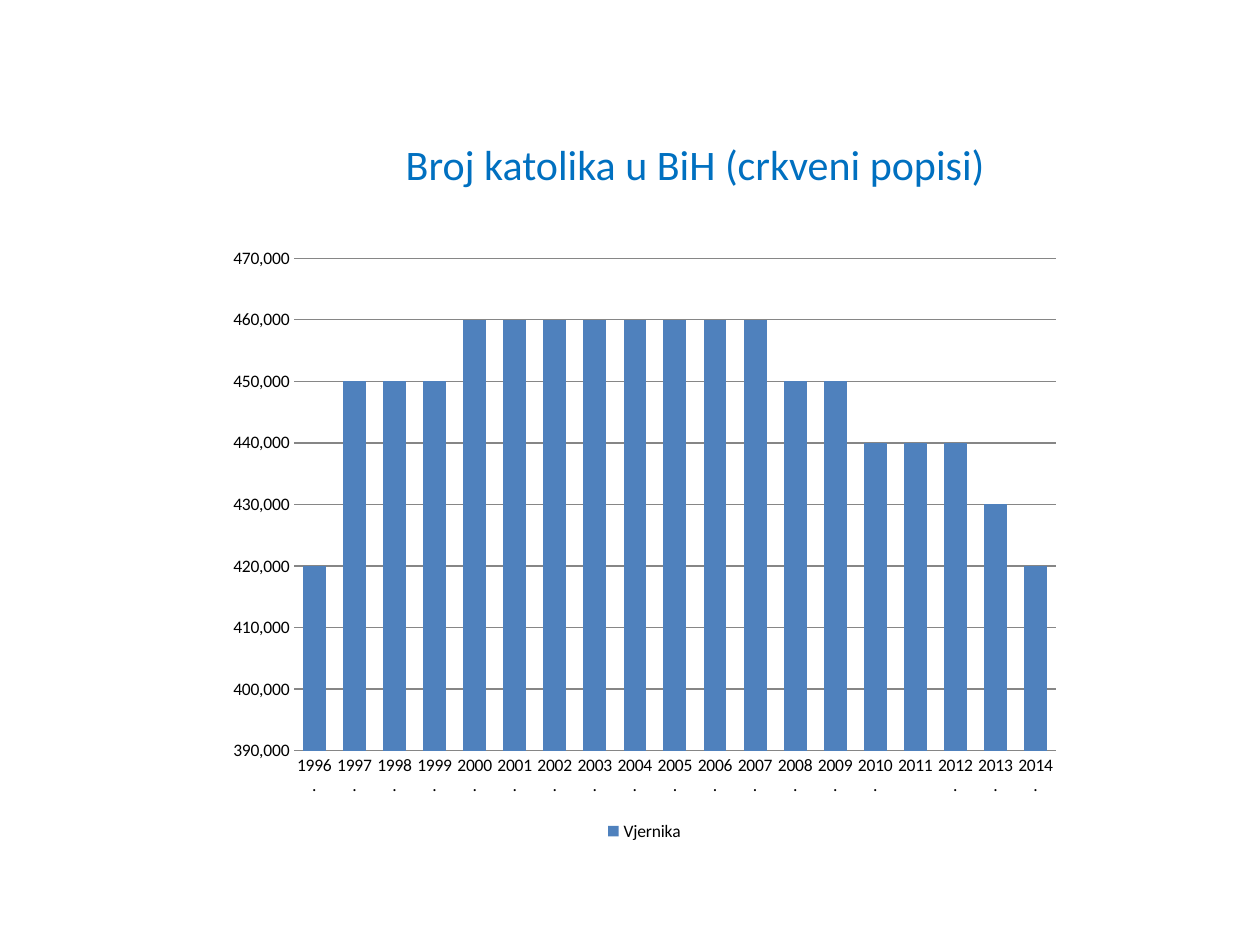
from pptx import Presentation
from pptx.chart.data import CategoryChartData
from pptx.dml.color import RGBColor
from pptx.enum.chart import XL_CHART_TYPE, XL_LEGEND_POSITION, XL_TICK_MARK
from pptx.enum.text import MSO_ANCHOR, PP_ALIGN
from pptx.util import Pt

COLUMN = XL_CHART_TYPE.COLUMN_CLUSTERED
BOTTOM = XL_LEGEND_POSITION.BOTTOM
NO_TICK = XL_TICK_MARK.NONE
MIDDLE = MSO_ANCHOR.MIDDLE
CENTER = PP_ALIGN.CENTER

FONT = "Calibri"
COLORS = {"title": "0070C0", "bar": "4F81BD", "text": "000000", "line": "868686"}
YEARS = ["2011" if year == 2011 else f"{year}." for year in range(1996, 2015)]
BELIEVERS = [
    420000, 450000, 450000, 450000, 460000, 460000, 460000, 460000, 460000, 460000,
    460000, 460000, 450000, 450000, 440000, 440000, 440000, 430000, 420000,
]


def color(name):
    return RGBColor.from_string(COLORS[name])


def style_font(font, size, name):
    font.name = FONT
    font.size = Pt(size)
    font.color.rgb = color(name)


def style_line(line):
    line.color.rgb = color("line")
    line.width = Pt(0.75)


def add_title(s, text):
    sp = s.shapes.add_textbox(Pt(90.5), Pt(48.5), Pt(613.5), Pt(90))
    tf = sp.text_frame
    tf.word_wrap = True
    tf.vertical_anchor = MIDDLE
    p = tf.paragraphs[0]
    p.alignment = CENTER
    r = p.add_run()
    r.text = text
    style_font(r.font, 24, "title")


def style_axes(chart):
    cat_axis, val_axis = chart.category_axis, chart.value_axis
    for axis in (cat_axis, val_axis):
        axis.major_tick_mark = NO_TICK
        axis.minor_tick_mark = NO_TICK
    style_line(cat_axis.format.line)
    val_axis.format.line.fill.background()
    val_axis.has_major_gridlines = True
    style_line(val_axis.major_gridlines.format.line)
    val_axis.minimum_scale = 390000
    val_axis.maximum_scale = 470000
    val_axis.major_unit = 10000
    val_axis.tick_labels.number_format = "#,##0"
    val_axis.tick_labels.number_format_is_linked = False


def add_column_chart(s):
    data = CategoryChartData(number_format="#,##0")
    data.categories = YEARS
    data.add_series("Vjernika", BELIEVERS)
    chart = s.shapes.add_chart(
        COLUMN, Pt(123.5), Pt(135), Pt(489.5), Pt(348.5), data
    ).chart
    chart.has_title = False
    style_font(chart.font, 10, "text")
    chart.has_legend = True
    chart.legend.position = BOTTOM
    chart.legend.include_in_layout = False
    style_axes(chart)
    plot = chart.plots[0]
    plot.gap_width = 75
    plot.vary_by_categories = False
    fill = plot.series[0].format.fill
    fill.solid()
    fill.fore_color.rgb = color("bar")


def main():
    prs = Presentation()
    prs.slide_width, prs.slide_height = Pt(720), Pt(540)
    s = prs.slides.add_slide(prs.slide_layouts[6])
    add_title(s, "Broj katolika u BiH (crkveni popisi)")
    add_column_chart(s)
    prs.save("out.pptx")


if __name__ == "__main__":
    main()
